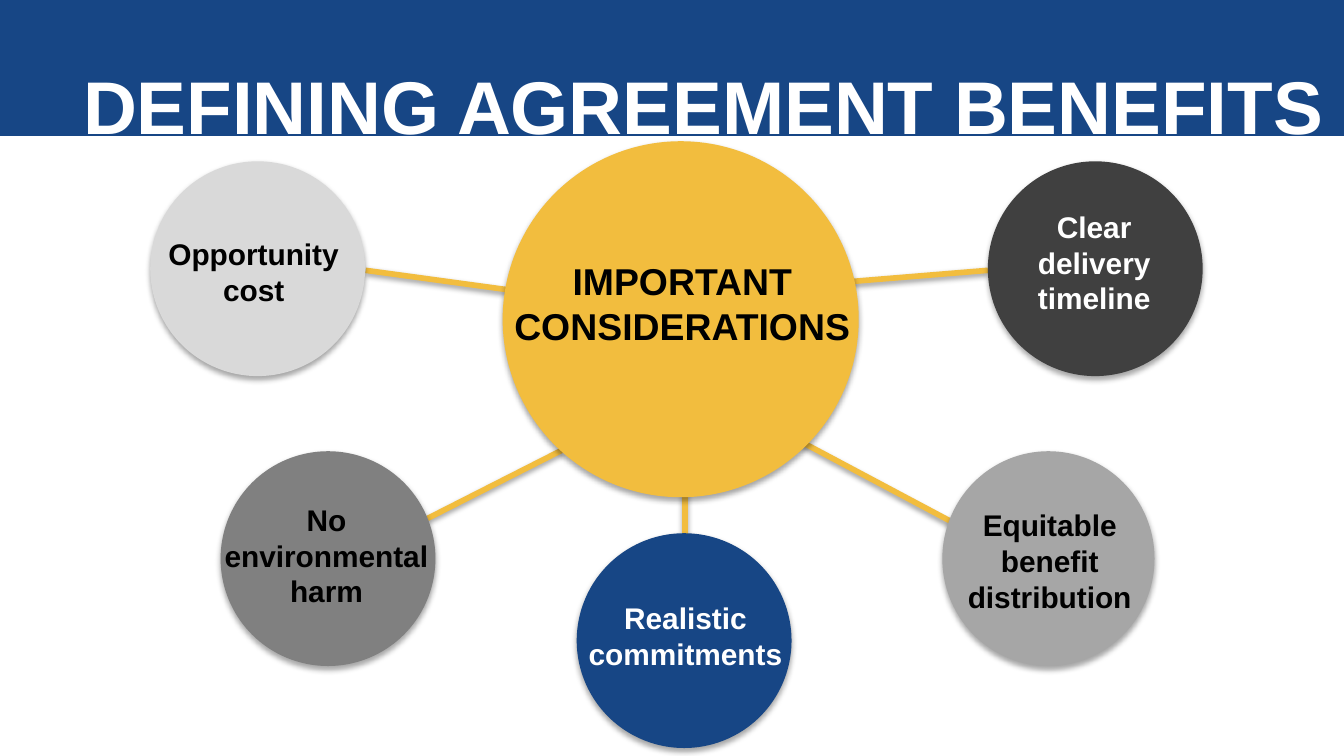
import pptx
import pptx.dml.color
import pptx.enum.shapes
import pptx.enum.text
import pptx.util
from lxml import etree

Cm = pptx.util.Cm
Pt = pptx.util.Pt
RGBColor = pptx.dml.color.RGBColor
MSO_SHAPE = pptx.enum.shapes.MSO_SHAPE
MSO_ANCHOR = pptx.enum.text.MSO_ANCHOR
PP_ALIGN = pptx.enum.text.PP_ALIGN

NAVY = RGBColor(0x17, 0x46, 0x85)
GOLD = RGBColor(0xF2, 0xBD, 0x3E)
PALE_GREY = RGBColor(0xD9, 0xD9, 0xD9)
LIGHT_GREY = RGBColor(0xA6, 0xA6, 0xA6)
MID_GREY = RGBColor(0x80, 0x80, 0x80)
DARK_GREY = RGBColor(0x40, 0x40, 0x40)
BLACK = RGBColor(0, 0, 0)
WHITE = RGBColor(0xFF, 0xFF, 0xFF)

DRAWING_NS = "http://schemas.openxmlformats.org/drawingml/2006/main"

SPOKES = [
    (10.06, 5.54, 6.91, 5.11),
    (10.62, 8.51, 8.08, 9.8),
    (15.98, 5.33, 18.67, 5.11),
    (15.16, 8.36, 17.98, 9.86),
    (12.95, 8.05, 12.95, 10.34),
]

CONSIDERATIONS = [
    ("Equitable benefit distribution", LIGHT_GREY, BLACK,
     (17.81, 8.53, 4.01, 4.06), (17.81, 9.45, 4.06, 2.31)),
    ("Opportunity cost", PALE_GREY, BLACK,
     (2.84, 3.05, 4.06, 4.06), (2.79, 4.32, 4.01, 1.63)),
    ("No environmental harm", MID_GREY, BLACK,
     (4.17, 8.53, 4.06, 4.06), (3.81, 9.35, 4.72, 2.31)),
    ("Realistic commitments", NAVY, WHITE,
     (10.9, 10.08, 4.06, 4.06), (10.72, 11.2, 4.47, 1.63)),
    ("Clear delivery timeline", DARK_GREY, WHITE,
     (18.67, 3.05, 4.06, 4.06), (18.85, 3.81, 3.66, 2.31)),
]


def lengths(values):
    return [Cm(v) for v in values]


def add_shadow(sp, distance, opacity):
    effects = etree.fromstring(
        f'<a:effectLst xmlns:a="{DRAWING_NS}">'
        f'<a:outerShdw blurRad="{Pt(3.1)}" dist="{Pt(distance)}" '
        'dir="5400000" rotWithShape="0">'
        f'<a:srgbClr val="000000"><a:alpha val="{opacity * 1000}"/></a:srgbClr>'
        '</a:outerShdw></a:effectLst>')
    sp._element.spPr.append(effects)


def add_spoke(shapes, ends):
    line = shapes.add_connector(
        pptx.enum.shapes.MSO_CONNECTOR.STRAIGHT, *lengths(ends))
    line.line.color.rgb = GOLD
    line.line.width = Pt(3)
    add_shadow(line, 1.6, 38)


def add_filled(shapes, kind, box, color):
    sp = shapes.add_shape(kind, *lengths(box))
    sp.fill.solid()
    sp.fill.fore_color.rgb = color
    sp.line.fill.background()
    return sp


def add_label(shapes, text, box, size, color, align=PP_ALIGN.CENTER,
              anchor=MSO_ANCHOR.TOP, margins=(0.25, 0.13, 0.25, 0.13)):
    tf = shapes.add_textbox(*lengths(box)).text_frame
    tf.word_wrap = True
    tf.vertical_anchor = anchor
    (tf.margin_left, tf.margin_top,
     tf.margin_right, tf.margin_bottom) = lengths(margins)
    tf.text = text
    p = tf.paragraphs[0]
    p.alignment = align
    font = p.runs[0].font
    font.name = "Arial"
    font.size = Pt(size)
    font.bold = True
    font.color.rgb = color


def add_circle(slide, circle_box, fill, text, text_box, size, color, **layout):
    group = slide.shapes.add_group_shape()
    sp = add_filled(group.shapes, MSO_SHAPE.OVAL, circle_box, fill)
    add_shadow(sp, 1.8, 35)
    add_label(group.shapes, text, text_box, size, color, **layout)


def main():
    prs = pptx.Presentation()
    prs.slide_width, prs.slide_height = Cm(25.4), Cm(14.29)
    slide = prs.slides.add_slide(prs.slide_layouts[6])

    for ends in SPOKES:
        add_spoke(slide.shapes, ends)

    band = add_filled(slide.shapes, MSO_SHAPE.RECTANGLE, (0, 0, 25.4, 2.57), NAVY)
    band.shadow.inherit = False
    add_label(slide.shapes, "DEFINING AGREEMENT BENEFITS",
              (1.47, 1.17, 24.43, 1.63), 40, WHITE, align=PP_ALIGN.LEFT,
              anchor=MSO_ANCHOR.MIDDLE, margins=(0.1, 0, 0.1, 0))

    for text, fill, color, circle_box, text_box in CONSIDERATIONS:
        add_circle(slide, circle_box, fill, text, text_box, 16, color)
    add_circle(slide, (9.5, 2.67, 6.73, 6.73), GOLD, "IMPORTANT CONSIDERATIONS",
               (7.75, 5, 10.39, 1.47), 20, BLACK,
               anchor=MSO_ANCHOR.MIDDLE, margins=(0, 0, 0.1, 0))

    prs.save("out.pptx")


if __name__ == "__main__":
    main()
